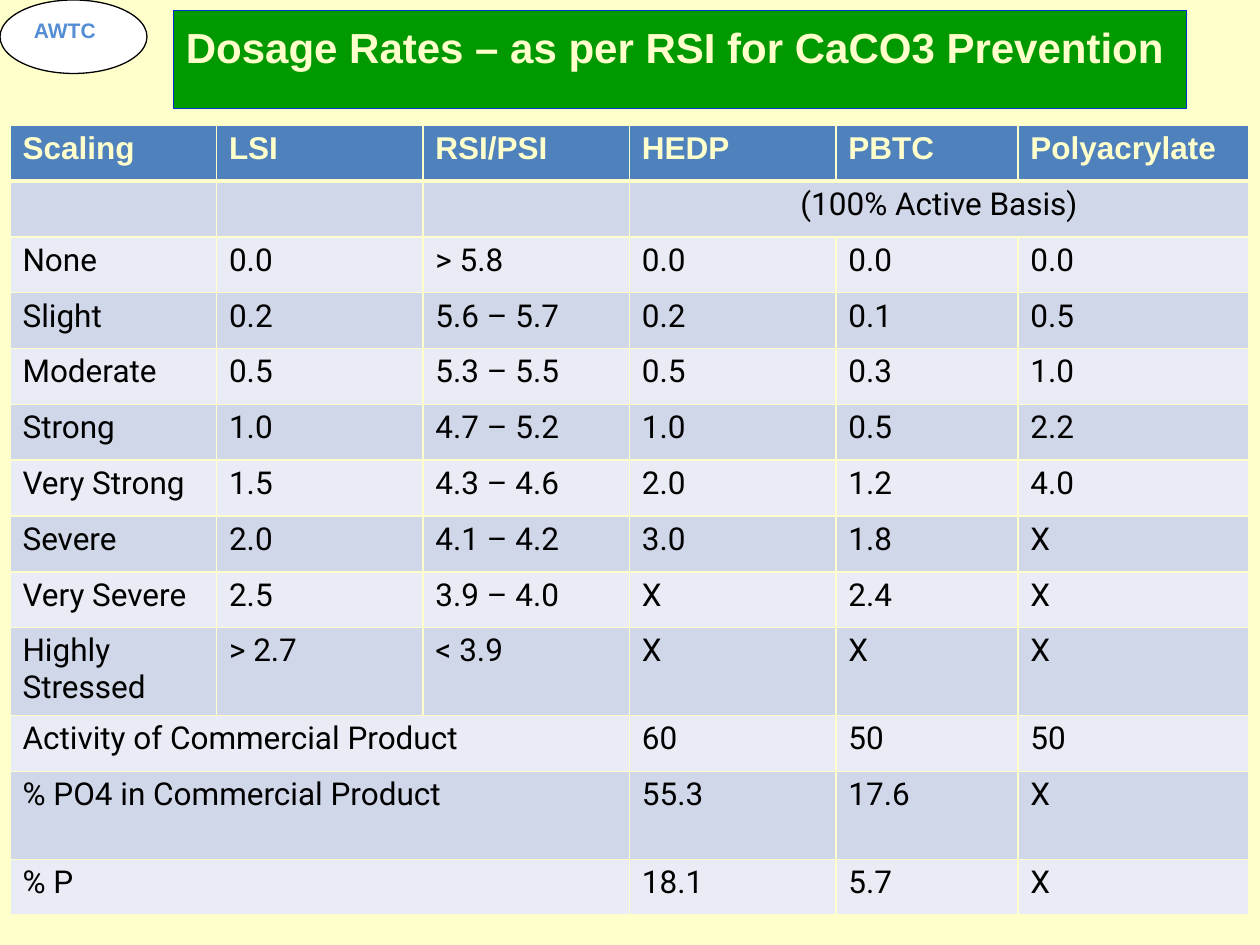
from dataclasses import dataclass

from lxml import etree
from pptx import Presentation
from pptx import util as u
from pptx.dml.color import RGBColor
from pptx.enum import shapes, text
from pptx.oxml import ns


@dataclass(frozen=True)
class Theme:
    page: str = "FFFFCC"
    badge: str = "FFFFFF"
    badge_line: str = "000000"
    badge_text: str = "538DD3"
    banner: str = "009900"
    banner_line: str = "0033CC"
    light_text: str = "FFFFCC"
    body_text: str = "000000"
    header: str = "4F81BC"
    bands: tuple = ("E9ECF4", "D0D7E8")
    heading_font: str = "Arial"
    body_font: str = "Roboto"
    title_size: float = 24
    table_size: float = 18
    badge_size: float = 12
    line_width: float = 0.75
    grid_width: float = 1
    rule_width: float = 3


HEADINGS = ["Scaling", "LSI", "RSI/PSI", "HEDP", "PBTC", "Polyacrylate"]
DOSAGES = [
    ["", "", "", "(100% Active Basis)", "", ""],
    ["None", "0.0", "> 5.8", "0.0", "0.0", "0.0"],
    ["Slight", "0.2", "5.6 – 5.7", "0.2", "0.1", "0.5"],
    ["Moderate", "0.5", "5.3 – 5.5", "0.5", "0.3", "1.0"],
    ["Strong", "1.0", "4.7 – 5.2", "1.0", "0.5", "2.2"],
    ["Very Strong", "1.5", "4.3 – 4.6", "2.0", "1.2", "4.0"],
    ["Severe", "2.0", "4.1 – 4.2", "3.0", "1.8", "X"],
    ["Very Severe", "2.5", "3.9 – 4.0", "X", "2.4", "X"],
    ["Highly Stressed", "> 2.7", "< 3.9", "X", "X", "X"],
    ["Activity of Commercial Product", "", "", "60", "50", "50"],
    ["% PO4 in Commercial Product", "", "", "55.3", "17.6", "X"],
    ["% P", "", "", "18.1", "5.7", "X"],
]
SPANS = [(1, 3, 5)] + [(row, 0, 2) for row in (10, 11, 12)]
COLUMN_WIDTHS = [118] * 4 + [104, 132]
ROW_HEIGHT = 31.9
TALL_ROW_HEIGHT = 50.3
TALL_ROWS = (9, 11)


class SlideBuilder:
    def __init__(self, slide, theme):
        self.slide = slide
        self.theme = theme

    def background(self):
        fill = self.slide.background.fill
        fill.solid()
        fill.fore_color.rgb = RGBColor.from_string(self.theme.page)

    def paint(self, shape, fill, line):
        shape.fill.solid()
        shape.fill.fore_color.rgb = RGBColor.from_string(fill)
        shape.line.color.rgb = RGBColor.from_string(line)
        shape.line.width = u.Pt(self.theme.line_width)

    def add_words(self, frame, words, font, size, color, bold,
                  align=text.PP_ALIGN.LEFT):
        paragraph = frame.paragraphs[0]
        paragraph.alignment = align
        run = paragraph.add_run()
        run.text = words
        style = {"name": font, "size": u.Pt(size), "bold": bold}
        for key, value in style.items():
            setattr(run.font, key, value)
        run.font.color.rgb = RGBColor.from_string(color)

    def inset(self, target, left, top):
        margins = {"margin_left": left, "margin_top": top,
                   "margin_right": 0, "margin_bottom": 0}
        for key, value in margins.items():
            setattr(target, key, u.Pt(value))
        target.vertical_anchor = text.MSO_ANCHOR.TOP

    def place(self, shape, *bounds):
        for key, value in zip(("left", "top", "width", "height"), bounds):
            setattr(shape, key, u.Pt(value))

    def title(self, words, *bounds):
        banner = self.slide.shapes.title
        self.place(banner, *bounds)
        self.paint(banner, self.theme.banner, self.theme.banner_line)
        frame = banner.text_frame
        frame.word_wrap = True
        frame.auto_size = text.MSO_AUTO_SIZE.NONE
        self.inset(frame, 7.2, 6)
        self.add_words(frame, words, self.theme.heading_font,
                       self.theme.title_size, self.theme.light_text, True)

    def oval(self, *bounds):
        badge = self.slide.shapes.add_shape(
            shapes.MSO_SHAPE.OVAL, *map(u.Pt, bounds))
        badge.shadow.inherit = False
        self.paint(badge, self.theme.badge, self.theme.badge_line)

    def label(self, words, *bounds):
        frame = self.slide.shapes.add_textbox(*map(u.Pt, bounds)).text_frame
        frame.word_wrap = True
        self.inset(frame, 0.7, 2)
        self.add_words(frame, words, self.theme.heading_font,
                       self.theme.badge_size, self.theme.badge_text, True)

    def borders(self, cell, **widths):
        properties = cell._tc.get_or_add_tcPr()
        for position, side in enumerate(("L", "R", "T", "B")):
            width = widths.get(side, self.theme.grid_width)
            edge = etree.Element(ns.qn(f"a:ln{side}"), w=str(u.Pt(width)))
            fill = etree.SubElement(edge, ns.qn("a:solidFill"))
            etree.SubElement(fill, ns.qn("a:srgbClr"), val=self.theme.page)
            properties.insert(position, edge)

    def table(self, rows, spans, left, top, widths, heights):
        bounds = map(u.Pt, (left, top, sum(widths), sum(heights)))
        grid = self.slide.shapes.add_table(len(rows), len(widths), *bounds).table
        for column, width in zip(grid.columns, widths):
            column.width = u.Pt(width)
        for row, height in zip(grid.rows, heights):
            row.height = u.Pt(height)
        for row, first, last in spans:
            grid.cell(row, first).merge(grid.cell(row, last))
        centered = {(row, first) for row, first, _ in spans if first > 0}
        for r, values in enumerate(rows):
            for c, value in enumerate(values):
                self.table_cell(grid.cell(r, c), value, r, (r, c) in centered)

    def table_cell(self, cell, value, row, centered):
        theme = self.theme
        heading = row == 0
        cell.fill.solid()
        fill = theme.header if heading else theme.bands[row % 2]
        cell.fill.fore_color.rgb = RGBColor.from_string(fill)
        rule = {0: {"B": theme.rule_width}, 1: {"T": theme.rule_width}}
        self.borders(cell, **rule.get(row, {}))
        self.inset(cell, 0 if centered else 7.2, 3)
        if value:
            self.add_words(
                cell.text_frame, value,
                theme.heading_font if heading else theme.body_font,
                theme.table_size,
                theme.light_text if heading else theme.body_text, heading,
                text.PP_ALIGN.CENTER if centered else text.PP_ALIGN.LEFT)


def main():
    deck = Presentation()
    deck.slide_width, deck.slide_height = u.Pt(720), u.Pt(540)
    builder = SlideBuilder(deck.slides.add_slide(deck.slide_layouts[5]), Theme())
    builder.background()
    builder.oval(0, 0, 84, 42)
    builder.label("AWTC", 18.7, 8, 40, 16.5)
    builder.title("Dosage Rates – as per RSI for CaCO3 Prevention", 99, 6, 579, 56)
    rows = [HEADINGS] + DOSAGES
    heights = [TALL_ROW_HEIGHT if r in TALL_ROWS else ROW_HEIGHT
               for r in range(len(rows))]
    builder.table(rows, SPANS, 5.7, 71.6, COLUMN_WIDTHS, heights)
    deck.save("out.pptx")


if __name__ == "__main__":
    main()
